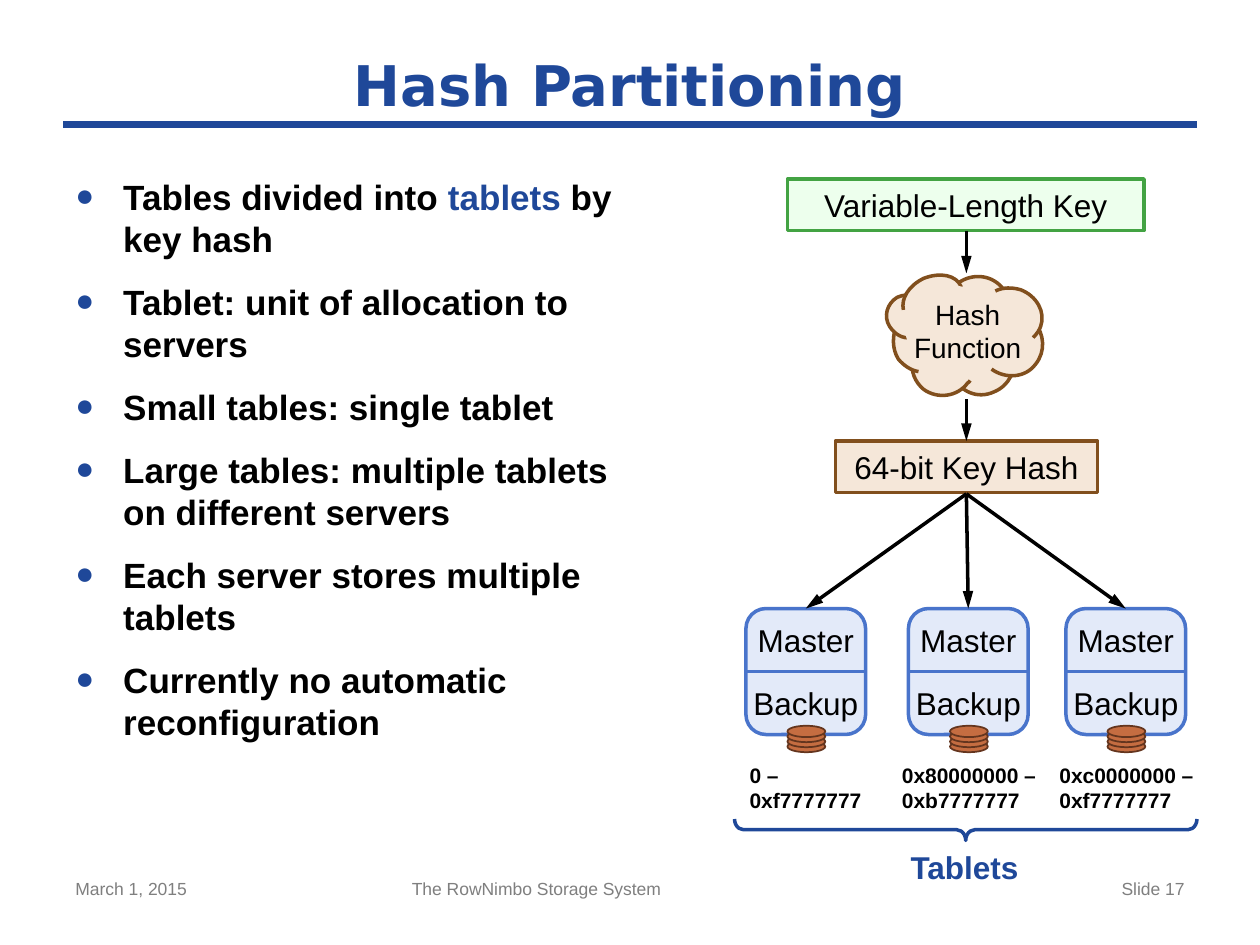
from copy import deepcopy

from lxml.etree import SubElement
from pptx import Presentation
from pptx.dml.color import RGBColor
from pptx.enum.shapes import MSO_CONNECTOR, MSO_SHAPE
from pptx.enum.text import MSO_ANCHOR, PP_ALIGN
from pptx.oxml.ns import qn
from pptx.util import Inches, Pt

COLORS = {
    "navy": "1F4899", "black": "000000", "gray": "7F7F7F",
    "key_fill": "EDFFED", "key_line": "43A343",
    "hash_fill": "F5E7D9", "hash_line": "814F1D",
    "server_fill": "E3EAF9", "server_line": "4974CB",
    "disk_fill": "C56D41", "disk_line": "64351E",
}
FORMATS = {
    "title": {"name": "DejaVu Sans", "size": Pt(32), "bold": True},
    "bullet": {"name": "Arial", "size": Pt(20), "bold": True},
    "label": {"name": "Arial", "size": Pt(18), "bold": False},
    "cloud": {"name": "Arial", "size": Pt(16), "bold": False},
    "range": {"name": "Arial", "size": Pt(12), "bold": True},
    "tablets": {"name": "Arial", "size": Pt(18), "bold": True},
    "footer": {"name": "Arial", "size": Pt(10), "bold": False},
}
BULLETS = [
    [("Tables divided into ", "black"), ("tablets", "navy"), (" by key hash", "black")],
    [("Tablet: unit of allocation to servers", "black")],
    [("Small tables: single tablet", "black")],
    [("Large tables: multiple tablets on different servers", "black")],
    [("Each server stores multiple tablets", "black")],
    [("Currently no automatic reconfiguration", "black")],
]
SERVERS = [
    (5.92, 5.85, 1.09, ["0 –", "0xf7777777"]),
    (7.21, 7.06, 1.27, ["0x80000000 –", "0xb7777777"]),
    (8.46, 8.31, 1.27, ["0xc0000000 –", "0xf7777777"]),
]
SERVER_WIDTH, SERVER_TOP, SERVER_HEIGHT = 0.95, 4.83, 1
CENTER = 7.67
CLOUD_LOBES = [
    ([(7.56, 2.98), (7.62, 3.11), (7.76, 3.17), (7.89, 3.11),
      (8.01, 3.06), (8.07, 2.94), (8.03, 2.82)], (7.79, 2.88)),
    ([(7.87, 2.93), (7.98, 3.01), (8.14, 3), (8.22, 2.89),
      (8.3, 2.79), (8.29, 2.65), (8.21, 2.56)], (8.03, 2.73)),
    ([(7.24, 2.86), (7.23, 2.95), (7.26, 3.03), (7.33, 3.09), (7.44, 3.17),
      (7.6, 3.15), (7.68, 3.04), (7.69, 3.04), (7.69, 3.03), (7.7, 3.02)], (7.49, 2.89)),
    ([(7.12, 2.58), (7.08, 2.66), (7.08, 2.77), (7.13, 2.85),
      (7.17, 2.9), (7.23, 2.94), (7.29, 2.95)], (7.34, 2.71)),
    ([(7.2, 2.34), (7.17, 2.34), (7.15, 2.35), (7.12, 2.36), (7.04, 2.41),
      (7.01, 2.51), (7.06, 2.59), (7.1, 2.65), (7.16, 2.69), (7.23, 2.68)], (7.21, 2.51)),
    ([(7.99, 2.34), (7.93, 2.21), (7.78, 2.16), (7.65, 2.22),
      (7.63, 2.23), (7.61, 2.24), (7.59, 2.26)], (7.76, 2.44)),
    ([(8.2, 2.68), (8.23, 2.65), (8.25, 2.62), (8.26, 2.59), (8.3, 2.48),
      (8.23, 2.35), (8.1, 2.3), (8.03, 2.28), (7.96, 2.28), (7.9, 2.31)], (8.03, 2.51)),
    ([(7.63, 2.28), (7.59, 2.18), (7.46, 2.16), (7.33, 2.21),
      (7.21, 2.27), (7.15, 2.37), (7.17, 2.46)], (7.4, 2.38)),
]
CLOUD_CORE = [(7.25, 2.89), (7.59, 3.01), (8.1, 2.78), (8.2, 2.53),
              (7.91, 2.33), (7.51, 2.25), (7.2, 2.4), (7.17, 2.59)]


def rgb(color):
    return RGBColor.from_string(COLORS[color])


def style_span(span, style, color):
    for name, value in FORMATS[style].items():
        setattr(span.font, name, value)
    span.font.color.rgb = rgb(color)


def write(frame, lines, style, color="black", align=PP_ALIGN.LEFT):
    for index, line in enumerate(lines):
        para = frame.add_paragraph() if index else frame.paragraphs[0]
        para.text, para.alignment = line, align
        for span in para.runs:
            style_span(span, style, color)


def add_text(shapes, place, lines, style, color="black", align=PP_ALIGN.LEFT, **settings):
    frame = shapes.add_textbox(*map(Inches, place)).text_frame
    for name, value in {"word_wrap": True, **settings}.items():
        setattr(frame, name, value)
    write(frame, lines, style, color, align)


def paint(shape, fill=None, line=None, width=2):
    shape.shadow.inherit = False
    if fill:
        shape.fill.solid()
        shape.fill.fore_color.rgb = rgb(fill)
    else:
        shape.fill.background()
    if line:
        shape.line.color.rgb = rgb(line)
        shape.line.width = Pt(width)
    else:
        shape.line.fill.background()


def add_shape(shapes, kind, place, fill, line, width=2):
    shape = shapes.add_shape(kind, *map(Inches, place))
    paint(shape, fill, line, width)
    return shape


def add_box(shapes, place, text, fill, line):
    box = add_shape(shapes, MSO_SHAPE.RECTANGLE, place, fill, line)
    box.text_frame.vertical_anchor = MSO_ANCHOR.MIDDLE
    write(box.text_frame, [text], "label", align=PP_ALIGN.CENTER)


def add_line(shapes, start, end, color, width=2, arrow=False):
    line = shapes.add_connector(MSO_CONNECTOR.STRAIGHT, *map(Inches, start + end))
    line.line.color.rgb = rgb(color)
    line.line.width = Pt(width)
    if arrow:
        SubElement(line.line._get_or_add_ln(), qn("a:tailEnd"), type="triangle", len="lg")
    SubElement(line._element.spPr, qn("a:effectLst"))


def add_bullets(shapes):
    frame = shapes.add_textbox(*map(Inches, (0.5, 1.34, 4.5, 5.37))).text_frame
    frame.word_wrap = True
    for index, spans in enumerate(BULLETS):
        para = frame.add_paragraph() if index else frame.paragraphs[0]
        para.space_before = Pt(12)
        props = para._p.get_or_add_pPr()
        props.set("marL", str(Inches(0.38)))
        props.set("indent", str(Inches(-0.38)))
        SubElement(SubElement(props, qn("a:buClr")), qn("a:srgbClr"), val=COLORS["navy"])
        SubElement(props, qn("a:buSzPct"), val="90000")
        SubElement(props, qn("a:buFont"), typeface="Arial")
        SubElement(props, qn("a:buChar"), char="●")
        for text, color in spans:
            span = para.add_run()
            span.text = text
            style_span(span, "bullet", color)


def add_polygon(shapes, points, line=None):
    corners = [(Inches(x), Inches(y)) for x, y in points]
    builder = shapes.build_freeform(*corners[0], scale=1.0)
    builder.add_line_segments(corners[1:], close=True)
    polygon = builder.convert_to_shape()
    paint(polygon, "hash_fill", line)
    return polygon


def bend(outline, curve_count):
    segments = outline.findall(qn("a:lnTo"))
    for first in range(0, 3 * curve_count, 3):
        curve = SubElement(outline, qn("a:cubicBezTo"))
        segments[first].addprevious(curve)
        for segment in segments[first:first + 3]:
            curve.append(segment[0])
            outline.remove(segment)


def add_lobe(shapes, controls, hub):
    lobe = add_polygon(shapes, controls + [hub], "hash_line")
    area = lobe._element.spPr.find(".//" + qn("a:path"))
    bend(area, len(controls) // 3)
    rim = deepcopy(area)
    for part in rim[-2:]:
        rim.remove(part)
    area.set("stroke", "0")
    rim.set("fill", "none")
    area.addprevious(rim)


def add_cloud(page):
    shapes = page.shapes.add_group_shape().shapes
    for controls, hub in CLOUD_LOBES:
        add_lobe(shapes, controls, hub)
    add_polygon(shapes, CLOUD_CORE)
    add_text(shapes, (7.15, 2.31, 1.06, 0.64), ["Hash\vFunction"], "cloud",
             align=PP_ALIGN.CENTER, word_wrap=False)


def add_server(page, left):
    shapes = page.shapes.add_group_shape().shapes
    add_shape(shapes, MSO_SHAPE.ROUNDED_RECTANGLE,
              (left, SERVER_TOP, SERVER_WIDTH, SERVER_HEIGHT), "server_fill", "server_line")
    margins = {f"margin_{side}": 0 for side in ("left", "top", "right", "bottom")}
    for row, role in enumerate(["Master", "Backup"]):
        add_text(shapes, (left, SERVER_TOP + 0.1 + 0.5 * row, SERVER_WIDTH, 0.3), [role],
                 "label", align=PP_ALIGN.CENTER, **margins)
    middle = SERVER_TOP + SERVER_HEIGHT / 2
    add_line(shapes, (left, middle), (left + SERVER_WIDTH, middle), "server_line")
    for level in range(4):
        add_shape(shapes, MSO_SHAPE.OVAL, (left + 0.33, 5.88 - 0.04 * level, 0.3, 0.09),
                  "disk_fill", "disk_line", 1)


def main():
    deck = Presentation()
    deck.slide_width, deck.slide_height = Inches(10), Inches(7.5)
    page = deck.slides.add_slide(deck.slide_layouts[6])
    shapes = page.shapes
    add_line(shapes, (0.5, 0.99), (9.5, 0.99), "navy", 4)
    add_text(shapes, (0.5, 0.33, 9, 0.67), ["Hash Partitioning"], "title", "navy",
             PP_ALIGN.CENTER, vertical_anchor=MSO_ANCHOR.MIDDLE)
    add_bullets(shapes)
    for left, width, text, align in [
        (0.5, 2.33, "March 1, 2015", PP_ALIGN.LEFT),
        (3.17, 3.75, "The RowNimbo Storage System", PP_ALIGN.LEFT),
        (7.17, 2.33, "Slide 17", PP_ALIGN.RIGHT),
    ]:
        add_text(shapes, (left, 6.92, width, 0.43), [text], "footer", "gray", align)
    add_box(shapes, (6.25, 1.42, 2.83, 0.41), "Variable-Length Key", "key_fill", "key_line")
    add_cloud(page)
    add_box(shapes, (6.63, 3.5, 2.08, 0.41), "64-bit Key Hash", "hash_fill", "hash_line")
    for top, bottom in [(1.83, 2.17), (3.17, 3.5)]:
        add_line(shapes, (CENTER, top), (CENTER, bottom), "black", arrow=True)
    for left, range_left, range_width, limits in SERVERS:
        add_server(page, left)
        add_line(shapes, (CENTER, 3.92), (left + SERVER_WIDTH / 2, SERVER_TOP), "black", arrow=True)
        add_text(shapes, (range_left, 6, range_width, 0.5), limits, "range", word_wrap=False)
    add_text(shapes, (7.12, 6.68, 1.07, 0.4), ["Tablets"], "tablets", "navy",
             PP_ALIGN.CENTER, word_wrap=False)
    brace = add_shape(shapes, MSO_SHAPE.LEFT_BRACE, (7.58, 4.75, 0.17, 3.67), None, "navy")
    brace.rotation = 270
    brace.adjustments[0] = 0.42
    deck.save("out.pptx")


if __name__ == "__main__":
    main()
